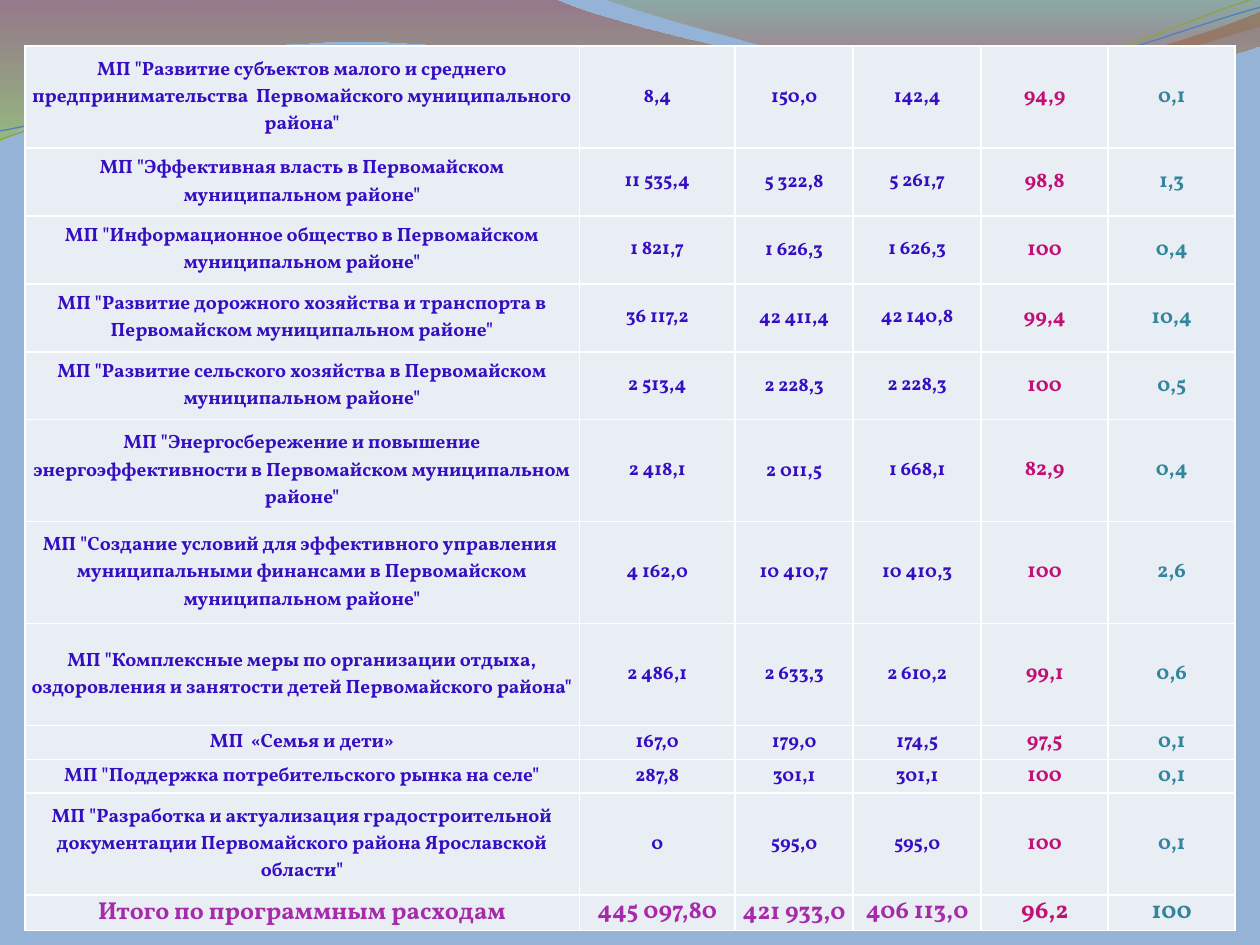
"""Build a budget slide: a programme spending table over a decorative wave header."""
from dataclasses import dataclass
from typing import Optional

from lxml.etree import SubElement
from pptx import Presentation
from pptx.dml.color import RGBColor
from pptx.enum.text import MSO_ANCHOR, PP_ALIGN
from pptx.oxml.ns import qn
from pptx.util import Cm, Pt

FONT = "Vollkorn"
INK, TOTAL, PERCENT, SHARE = "350EC2", "A62AA9", "C10F75", "31859C"
CELL_FILL, BORDER, BACKGROUND = "E9EDF4", "FFFFFF", "95B3D7"
TABLE_HEIGHT = 17.81

Point = tuple[float, float]


@dataclass(frozen=True)
class Stop:
    position: float
    color: str
    opacity: int


@dataclass(frozen=True)
class Wave:
    start: Point
    segments: tuple[tuple[Point, ...], ...]
    stops: tuple[Stop, ...] = ()
    color: str = ""
    width: float = 0
    rotation: float = 0


@dataclass(frozen=True)
class Column:
    width: float
    inset: float = 0
    color: Optional[str] = None
    size: float = 11


@dataclass(frozen=True)
class Programme:
    lines: int
    name: str
    values: tuple[str, ...]
    is_total: bool = False


WAVES = (
    Wave((0, 0), (
        ((11.18, -0.03),),
        ((12.09, 0.43), (16.87, 1.6), (19.25, 1.6)),
        ((21.67, 1.6), (24.33, 0.66), (25.4, 0.23)),
        ((25.43, 0.91),),
        ((24.97, 1.12), (22.1, 1.93), (18.95, 1.91)),
        ((15.8, 1.91), (9.7, 0.71), (6.53, 0.86)),
        ((3.28, 0.91), (1.17, 2.11), (-0.03, 2.87)),
    ), (Stop(0, "973330", 45), Stop(1, "95C238", 55))),
    Wave((12.17, -0.03), (
        ((12.93, 0.28), (17.32, 1.57), (19.53, 1.65)),
        ((21.74, 1.75), (24.41, 0.81), (25.4, 0.53)),
        ((25.4, 0),),
    ), (Stop(0, "769537", 30), Stop(0.8, "BE3330", 45))),
    Wave((-0.05, 2.22), (
        ((1.19, 1.82), (4.02, 1.04), (7.05, 1.05)),
        ((10.05, 1.07), (15.02, 2.37), (18.08, 2.29)),
        ((21.13, 2.2), (23.87, 0.91), (25.41, 0.55)),
    ), color="89A54F", width=0.85, rotation=357.3),
    Wave((-0.04, 2.04), (
        ((1.16, 1.9), (4.1, 1.14), (7.2, 1.16)),
        ((10.25, 1.18), (15.13, 2.25), (18.18, 2.17)),
        ((21.21, 2.1), (23.93, 1.06), (25.45, 0.75)),
    ), color="4F81BD", width=0.75, rotation=357.3),
)

COLUMNS = (
    Column(11.18, 0.02), Column(3.14), Column(2.38, 0.02), Column(2.58),
    Column(2.56, color=PERCENT, size=12), Column(2.56, color=SHARE, size=12),
)

PROGRAMMES = (
    Programme(3, 'МП "Развитие субъектов малого и среднего предпринимательства  Первомайского муниципального района"',
              ("8,4", "150,0", "142,4", "94,9", "0,1")),
    Programme(2, 'МП "Эффективная власть в Первомайском муниципальном районе"',
              ("11 535,4", "5 322,8", "5 261,7", "98,8", "1,3")),
    Programme(2, 'МП "Информационное общество в Первомайском муниципальном районе"',
              ("1 821,7", "1 626,3", "1 626,3", "100", "0,4")),
    Programme(2, 'МП "Развитие дорожного хозяйства и транспорта в Первомайском муниципальном районе"',
              ("36 117,2", "42 411,4", "42 140,8", "99,4", "10,4")),
    Programme(2, 'МП "Развитие сельского хозяйства в Первомайском муниципальном районе"',
              ("2 513,4", "2 228,3", "2 228,3", "100", "0,5")),
    Programme(3, 'МП "Энергосбережение и повышение энергоэффективности в Первомайском муниципальном районе"',
              ("2 418,1", "2 011,5", "1 668,1", "82,9", "0,4")),
    Programme(3, 'МП "Создание условий для эффективного управления  муниципальными финансами '
                 'в Первомайском муниципальном районе"',
              ("4 162,0", "10 410,7", "10 410,3", "100", "2,6")),
    Programme(3, 'МП "Комплексные меры по организации отдыха, оздоровления и занятости детей Первомайского района"',
              ("2 486,1", "2 633,3", "2 610,2", "99,1", "0,6")),
    Programme(1, "МП  «Семья и дети»", ("167,0", "179,0", "174,5", "97,5", "0,1")),
    Programme(1, 'МП "Поддержка потребительского рынка на селе"',
              ("287,8", "301,1", "301,1", "100", "0,1")),
    Programme(3, 'МП "Разработка и актуализация градостроительной документации '
                 'Первомайского района Ярославской области"',
              ("0", "595,0", "595,0", "100", "0,1")),
    Programme(1, "Итого по программным расходам",
              ("445 097,80", "421 933,0", "406 113,0", "96,2", "100"), True),
)


def rgb(value: str) -> RGBColor:
    return RGBColor.from_string(value)


def bend_segments(sp, segments: tuple[tuple[Point, ...], ...]) -> None:
    lines = iter(list(sp._element.iter(qn("a:lnTo"))))
    for segment in segments:
        first, *others = [next(lines) for _ in segment]
        if others:
            first.tag = qn("a:cubicBezTo")
        for other in others:
            first.append(other[0])
            other.getparent().remove(other)


def draw_wave(s, wave: Wave) -> None:
    points = [wave.start, *(point for segment in wave.segments for point in segment)]
    vertices = [(Cm(x), Cm(y)) for x, y in points]
    builder = s.shapes.build_freeform(*vertices[0])
    builder.add_line_segments(vertices[1:], close=bool(wave.stops))
    sp = builder.convert_to_shape()
    bend_segments(sp, wave.segments)
    sp.rotation = wave.rotation
    sp.shadow.inherit = False
    if not wave.stops:
        sp.fill.background()
        sp.line.color.rgb = rgb(wave.color)
        sp.line.width = Pt(wave.width)
        return
    sp.line.fill.background()
    sp.fill.gradient()
    sp.fill.gradient_angle = 270
    for target, stop in zip(sp.fill.gradient_stops, wave.stops):
        target.position = stop.position
        target.color.rgb = rgb(stop.color)
    for color, stop in zip(sp._element.spPr.iter(qn("a:srgbClr")), wave.stops):
        SubElement(color, qn("a:alpha"), val=str(stop.opacity * 1000))


def draw_cell(cell, text: str, column: Column, is_total: bool) -> None:
    cell.margin_left = cell.margin_right = cell.margin_top = Cm(column.inset)
    cell.margin_bottom = 0
    cell.vertical_anchor = MSO_ANCHOR.MIDDLE
    for side in ("a:lnL", "a:lnR", "a:lnT", "a:lnB"):
        line = SubElement(cell._tc.get_or_add_tcPr(), qn(side), w=str(Pt(1)))
        SubElement(SubElement(line, qn("a:solidFill")), qn("a:srgbClr"), val=BORDER)
    cell.fill.solid()
    cell.fill.fore_color.rgb = rgb(CELL_FILL)
    p = cell.text_frame.paragraphs[0]
    p.alignment = PP_ALIGN.CENTER
    r = p.add_run()
    r.text = text
    r.font.name = FONT
    r.font.bold = True
    r.font.size = Pt(14 if is_total else column.size)
    r.font.color.rgb = rgb(column.color or (TOTAL if is_total else INK))


def draw_table(s) -> None:
    width = sum(column.width for column in COLUMNS)
    table = s.shapes.add_table(len(PROGRAMMES), len(COLUMNS), Cm(0.5), Cm(0.93),
                               Cm(width), Cm(TABLE_HEIGHT)).table
    table.first_row = table.horz_banding = False
    for target, column in zip(table.columns, COLUMNS):
        target.width = Cm(column.width)
    line_height = TABLE_HEIGHT / sum(programme.lines for programme in PROGRAMMES)
    for row, programme in zip(table.rows, PROGRAMMES):
        row.height = Cm(line_height * programme.lines)
        texts = (programme.name, *programme.values)
        for cell, text, column in zip(row.cells, texts, COLUMNS):
            draw_cell(cell, text, column, programme.is_total)


def main() -> None:
    prs = Presentation()
    prs.slide_width, prs.slide_height = Cm(25.4), Cm(19.05)
    s = prs.slides.add_slide(prs.slide_layouts[6])
    s.background.fill.solid()
    s.background.fill.fore_color.rgb = rgb(BACKGROUND)
    for wave in WAVES:
        draw_wave(s, wave)
    draw_table(s)
    prs.save("out.pptx")


if __name__ == "__main__":
    main()
